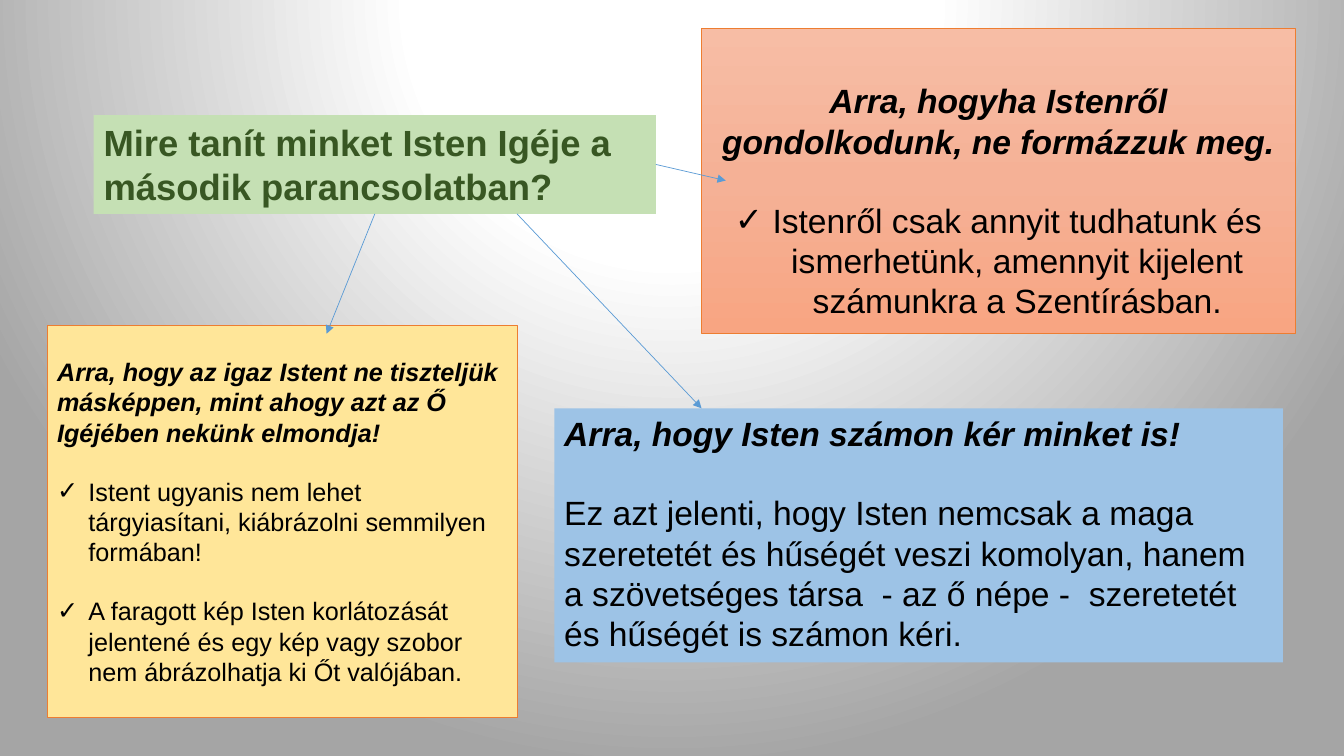
from lxml.etree import SubElement
from pptx import Presentation
from pptx.dml.color import RGBColor
from pptx.enum.shapes import MSO_CONNECTOR, MSO_SHAPE
from pptx.enum.text import MSO_ANCHOR, PP_ALIGN
from pptx.oxml.ns import qn
from pptx.util import Cm, Pt

# Content: boxes are (left, top, width, height) in cm
QUESTION = "Mire tanít minket Isten Igéje a második parancsolatban?"
WORSHIP = "Arra, hogy az igaz Istent ne tiszteljük másképpen, mint ahogy azt az Ő Igéjében nekünk elmondja!"
WORSHIP_POINTS = [
    "Istent ugyanis nem lehet tárgyiasítani, kiábrázolni semmilyen formában!",
    "A faragott kép Isten korlátozását jelentené és egy kép vagy szobor nem ábrázolhatja ki Őt valójában.",
]
THINKING = "Arra, hogyha Istenről gondolkodunk, ne formázzuk meg."
THINKING_POINTS = ["Istenről csak annyit tudhatunk és ismerhetünk, amennyit kijelent számunkra a Szentírásban."]
ACCOUNT = "Arra, hogy Isten számon kér minket is!"
ACCOUNT_TEXT = ("Ez azt jelenti, hogy Isten nemcsak a maga szeretetét és hűségét veszi komolyan, hanem "
                "a szövetséges társa  - az ő népe -  szeretetét és hűségét is számon kéri.")

BOXES = {
    "worship": (1.19, 8.2, 11.84, 9.88),
    "thinking": (17.68, 0.71, 14.96, 7.7),
    "account": (13.97, 10.29, 18.36, 6.4),
    "question": (2.36, 2.9, 14.17, 2.49),
}

THEME = {
    "font": "Arial", "text": "000000", "title": "385723",
    "yellow": "FFE699", "blue": "9DC3E6", "green": "C5E0B4",
    "border": "ED7D31", "arrow": "5B9BD5",
    "salmon": [(0, "F7BDA5"), (50, "F5B196"), (100, "F8A582")],
    "backdrop": [(0, "FFFFFF"), (34, "FFFFFF"), (100, "A5A5A5")],
    "title_size": 26, "large": 24, "small": 18, "line": 0.5,
}
LINE_HEIGHT = 1.15


def set_gradient(fill, element, stops):
    """Apply the stops and return the gradient element, still without direction."""
    fill.gradient()
    grad = next(element.iter(qn("a:gradFill")))
    for child in list(grad):
        grad.remove(child)
    gs_list = SubElement(grad, qn("a:gsLst"))
    for pos, color in stops:
        gs = SubElement(gs_list, qn("a:gs"), pos=str(pos * 1000))
        SubElement(gs, qn("a:srgbClr"), val=color)
    return grad


def add_box(name, fill, border=False, anchor=MSO_ANCHOR.MIDDLE):
    sp = s.shapes.add_shape(MSO_SHAPE.RECTANGLE, *map(Cm, BOXES[name]))
    sp.shadow.inherit = False
    if isinstance(fill, list):
        grad = set_gradient(sp.fill, sp.element, fill)
        SubElement(grad, qn("a:lin"), ang="5400000", scaled="0")
    else:
        sp.fill.solid()
        sp.fill.fore_color.rgb = RGBColor.from_string(fill)
    if border:
        sp.line.color.rgb = RGBColor.from_string(THEME["border"])
        sp.line.width = Pt(THEME["line"])
    else:
        sp.line.fill.background()
    sp.text_frame.word_wrap = True
    sp.text_frame.vertical_anchor = anchor
    return sp.text_frame


def add_text(tf, text, size, color=THEME["text"], bold=False, italic=False,
             align=PP_ALIGN.LEFT, indent=None):
    """Fill the first paragraph, or add one a blank line below; indent gives a check mark."""
    p = tf.paragraphs[0]
    if p.runs:
        p = tf.add_paragraph()
        p.space_before = Pt(round(size * LINE_HEIGHT, 1))
    p.alignment = align
    if indent:
        pPr = p._p.get_or_add_pPr()
        pPr.set("marL", str(Cm(indent)))
        pPr.set("indent", str(-Cm(indent)))
        SubElement(pPr, qn("a:buFont"), typeface=THEME["font"])
        SubElement(pPr, qn("a:buChar"), char="✓")
    r = p.add_run()
    r.text = text
    r.font.name, r.font.size = THEME["font"], Pt(size)
    r.font.bold, r.font.italic = bold, italic
    r.font.color.rgb = RGBColor.from_string(color)


def add_arrow(start, end):
    line = s.shapes.add_connector(MSO_CONNECTOR.STRAIGHT, *map(Cm, start + end))
    line.line.color.rgb = RGBColor.from_string(THEME["arrow"])
    line.line.width = Pt(THEME["line"])
    SubElement(line.line._get_or_add_ln(), qn("a:tailEnd"), type="triangle")
    SubElement(line.element.spPr, qn("a:effectLst"))


prs = Presentation()
prs.slide_width, prs.slide_height = Cm(33.87), Cm(19.05)
s = prs.slides.add_slide(prs.slide_layouts[6])

# Background
backdrop = set_gradient(s.background.fill, s.element, THEME["backdrop"])
circle = SubElement(backdrop, qn("a:path"), path="circle")
SubElement(circle, qn("a:fillToRect"), l="50000", t="-80000", r="50000", b="180000")

# Worship box
tf = add_box("worship", THEME["yellow"], border=True)
add_text(tf, WORSHIP, THEME["small"], bold=True, italic=True)
for point in WORSHIP_POINTS:
    add_text(tf, point, THEME["small"], indent=0.79)

# Thinking box, its text set one line lower
tf = add_box("thinking", THEME["salmon"], border=True)
tf.margin_top += Pt(THEME["large"] * LINE_HEIGHT)
add_text(tf, THINKING, THEME["large"], bold=True, italic=True, align=PP_ALIGN.CENTER)
for point in THINKING_POINTS:
    add_text(tf, point, THEME["large"], align=PP_ALIGN.CENTER, indent=0.95)

# Account box
tf = add_box("account", THEME["blue"], anchor=MSO_ANCHOR.TOP)
add_text(tf, ACCOUNT, THEME["large"], bold=True, italic=True)
add_text(tf, ACCOUNT_TEXT, THEME["large"])

# Question box
tf = add_box("question", THEME["green"], anchor=MSO_ANCHOR.TOP)
add_text(tf, QUESTION, THEME["title_size"], color=THEME["title"], bold=True)

# Arrows from the question to each answer
left, top, width, height = BOXES["question"]
right, bottom = left + width, top + height
worship_right = BOXES["worship"][0] + BOXES["worship"][2]
add_arrow((right, top + height / 2), (18.29, 4.55))
add_arrow((left + width / 2, bottom), (8.23, 8.41))
add_arrow((worship_right, bottom), (BOXES["thinking"][0], BOXES["account"][1]))

prs.save("out.pptx")
